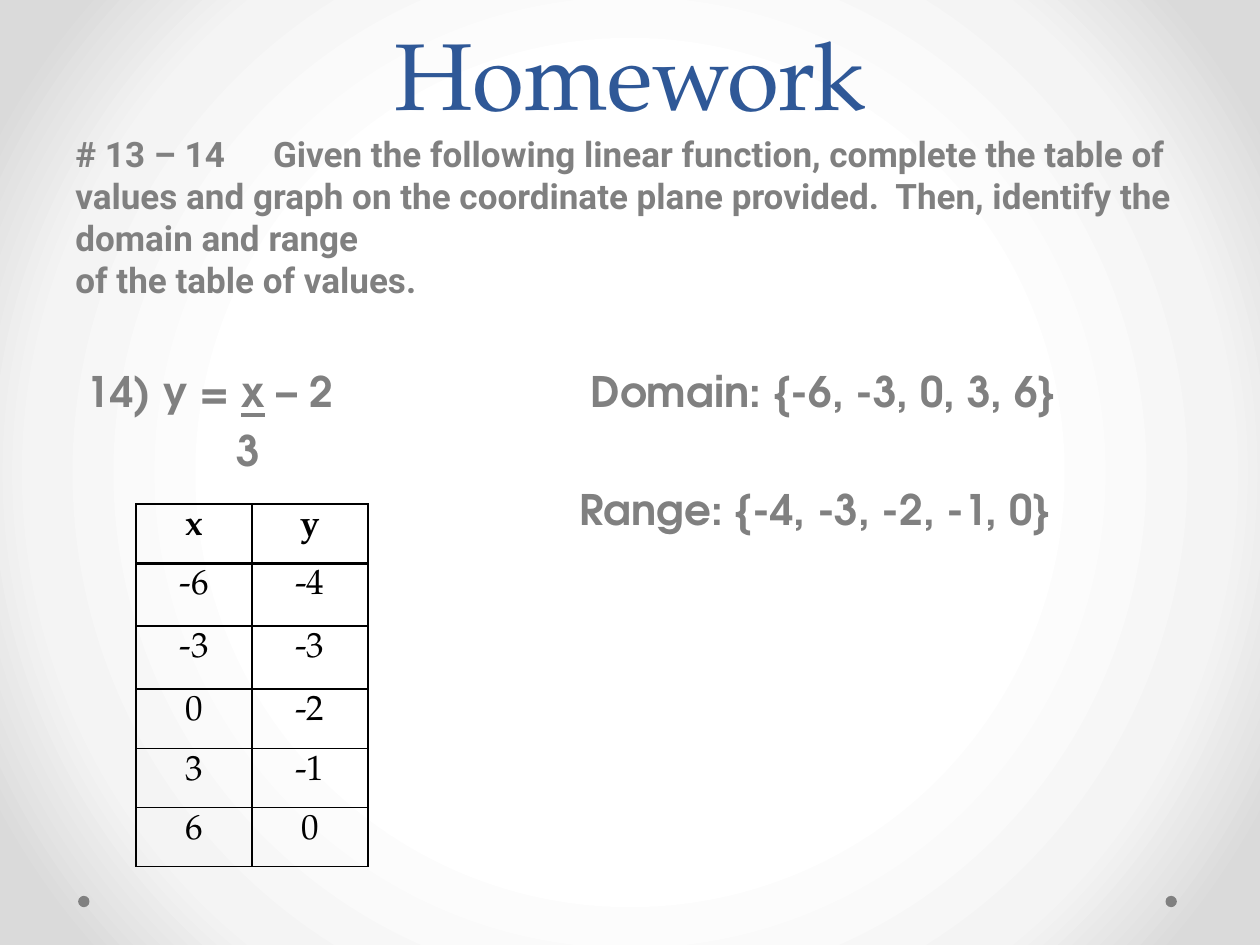
import pptx
import pptx.dml.color
import pptx.enum.shapes
import pptx.enum.text
import pptx.oxml
import pptx.oxml.ns
import pptx.util
from pptx.util import Inches, Pt

COLORS = {"title": "2F5897", "gray": "808080", "black": "000000"}
GLOW = [(50, "FFFFFF"), (76, "F4F4F4"), (92, "DADADA")]
SERIF, SANS, GEOMETRIC = "TeX Gyre Pagella", "Roboto", "TeX Gyre Adventor"

TITLE = "Homework"
# Each paragraph is a list of (text, underlined) runs.
INSTRUCTIONS = [
    [("# 13 – 14\t Given the following linear function, complete the table "
      "of values and graph on the coordinate plane provided.  Then, identify "
      "the domain and range", False)],
    [("of the table of values.", False)],
]
EQUATION = [[("14) y = ", False), ("x", True), (" – 2", False)], [("3", False)]]
ANSWERS = [[("Domain: {-6, -3, 0, 3, 6}", False)],
           [("Range: {-4, -3, -2, -1, 0}", False)]]
VALUES = [("x", "y"), (-6, -4), (-3, -3), (0, -2), (3, -1), (6, 0)]
ROW_HEIGHTS = [0.47, 0.5, 0.5, 0.47, 0.47, 0.47]


def style(font, name, size, color, bold=False):
    font.name, font.size, font.bold = name, Pt(size), bold
    font.color.rgb = pptx.dml.color.RGBColor.from_string(COLORS[color])


def set_background(slide):
    """Fill the slide with a glow that darkens from the centre outwards."""
    stops = "".join(f'<a:gs pos="{pos * 1000}"><a:srgbClr val="{color}"/></a:gs>'
                    for pos, color in GLOW)
    slide.element.cSld.insert(0, pptx.oxml.parse_xml(
        f'<p:bg {pptx.oxml.ns.nsdecls("p", "a")}><p:bgPr><a:gradFill rotWithShape="1">'
        f'<a:gsLst>{stops}</a:gsLst><a:path path="circle">'
        '<a:fillToRect l="50000" t="50000" r="50000" b="50000"/></a:path>'
        '</a:gradFill><a:effectLst/></p:bgPr></p:bg>'))


def add_text(slide, box, paragraphs, font, size, indents=(0, 0), gap=0):
    """Add bold gray text; indents are inches per paragraph, gap is points."""
    frame = slide.shapes.add_textbox(*map(Inches, box)).text_frame
    frame.word_wrap = True
    for index, (runs, indent) in enumerate(zip(paragraphs, indents)):
        paragraph = frame.paragraphs[0] if index == 0 else frame.add_paragraph()
        paragraph._p.get_or_add_pPr().set("marL", str(Inches(indent)))
        if index:
            paragraph.space_before = Pt(gap)
        for text, underlined in runs:
            run = paragraph.add_run()
            run.text = text
            style(run.font, font, size, "gray", True)
            run.font.underline = underlined


def set_borders(cell, widths):
    """Draw black borders; widths maps L, R, T and B to points."""
    properties = cell._tc.get_or_add_tcPr()
    for index, (side, width) in enumerate(widths.items()):
        properties.insert(index, pptx.oxml.parse_xml(
            f'<a:ln{side} {pptx.oxml.ns.nsdecls("a")} w="{Pt(width)}"><a:solidFill>'
            f'<a:srgbClr val="{COLORS["black"]}"/></a:solidFill></a:ln{side}>'))


def add_values_table(slide):
    table = slide.shapes.add_table(
        len(VALUES), 2, Inches(1.08), Inches(4), Inches(1.84),
        Inches(sum(ROW_HEIGHTS))).table
    table.first_row = table.horz_banding = False
    for column in table.columns:
        column.width = Inches(0.92)
    for r, (pair, height) in enumerate(zip(VALUES, ROW_HEIGHTS)):
        table.rows[r].height = Inches(height)
        for c, value in enumerate(pair):
            cell = table.cell(r, c)
            cell.fill.background()
            set_borders(cell, {"L": 1, "R": 1, "T": 2 if r == 1 else 1,
                               "B": 2 if r == 0 else 1})
            paragraph = cell.text_frame.paragraphs[0]
            paragraph.text = str(value)
            paragraph.alignment = pptx.enum.text.PP_ALIGN.CENTER
            style(paragraph.runs[0].font, SERIF, 20, "black", r == 0)


def add_title(slide):
    title = slide.shapes.title
    title.left, title.top, title.width, title.height = map(
        Inches, (0.5, 0.25, 9, 0.83))
    frame = title.text_frame
    frame.text = TITLE
    frame.auto_size = pptx.enum.text.MSO_AUTO_SIZE.NONE
    frame.vertical_anchor = pptx.enum.text.MSO_ANCHOR.BOTTOM
    heading = frame.paragraphs[0]
    heading.alignment = pptx.enum.text.PP_ALIGN.CENTER
    heading.line_spacing = Pt(58)
    style(heading.runs[0].font, SERIF, 54, "title")


def add_corner_dots(slide):
    for left in (0.62, 9.25):
        dot = slide.shapes.add_shape(
            pptx.enum.shapes.MSO_SHAPE.OVAL,
            *map(Inches, (left, 7.11, 0.09, 0.09)))
        dot.shadow.inherit = False
        dot.fill.solid()
        dot.fill.fore_color.rgb = pptx.dml.color.RGBColor.from_string(COLORS["gray"])
        dot.line.fill.background()


def main():
    deck = pptx.Presentation()
    deck.slide_width, deck.slide_height = Inches(10), Inches(7.5)
    slide = deck.slides.add_slide(deck.slide_layouts.get_by_name("Title Only"))
    set_background(slide)
    add_corner_dots(slide)
    add_title(slide)
    add_text(slide, (0.5, 1, 9.27, 1.45), INSTRUCTIONS, SANS, 20)
    add_text(slide, (0.5, 2.85, 3.5, 1), EQUATION, GEOMETRIC, 24, (0.09, 1.28), 4.8)
    # Range stands two text lines below Domain.
    add_text(slide, (4.5, 2.85, 5.2, 1.5), ANSWERS, GEOMETRIC, 24, (0.09, 0), 38.5)
    add_values_table(slide)
    deck.save("out.pptx")


if __name__ == "__main__":
    main()
